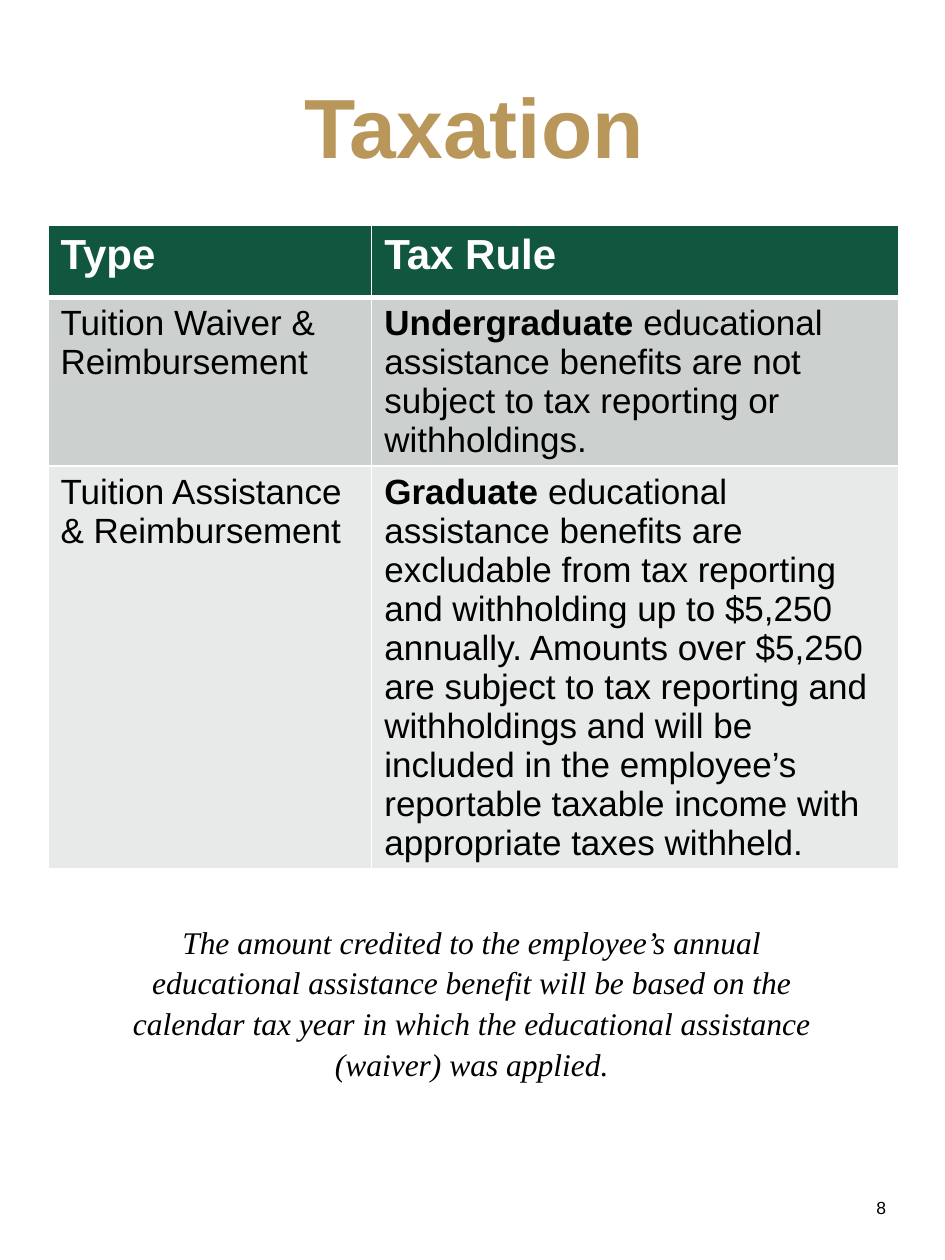
import pptx
import pptx.dml.color
import pptx.enum.text
import pptx.oxml
import pptx.oxml.ns
import pptx.util

COLORS = {
    "gold": "B9975B", "green": "115740", "white": "FFFFFF", "black": "000000",
    "band": "CCD1CF", "light": "E7EAE8",
}
ALIGN = pptx.enum.text.PP_ALIGN
ANCHOR = pptx.enum.text.MSO_ANCHOR
AUTO = pptx.enum.text.MSO_AUTO_SIZE

prs = pptx.Presentation()
prs.slide_width = pptx.util.Inches(7.5)
prs.slide_height = pptx.util.Inches(10)
X = prs.slide_width / 100
Y = prs.slide_height / 100


def rgb(name):
    return pptx.dml.color.RGBColor.from_string(COLORS[name])


def add_run(p, text, size=20, font="Arial", color="black", bold=False, italic=False):
    r = p.add_run()
    r.text = text
    r.font.size = pptx.util.Pt(size)
    r.font.name = font
    r.font.color.rgb = rgb(color)
    r.font.bold = bold
    r.font.italic = italic


s = prs.slides.add_slide(prs.slide_layouts[5])

sp = s.shapes.title
sp.left, sp.top = int(2.93 * X), int(4 * Y)
sp.width, sp.height = int(94.53 * X), int(11.8 * Y)
tf = sp.text_frame
tf.auto_size = AUTO.NONE
tf.vertical_anchor = ANCHOR.MIDDLE
p = tf.paragraphs[0]
p.alignment = ALIGN.CENTER
add_run(p, "Taxation", size=48, color="gold", bold=True)

rows = [
    (5.7, "green", [[("Type", True)], [("Tax Rule", True)]]),
    (10.7, "band", [
        [("Tuition Waiver & Reimbursement", False)],
        [("Undergraduate", True),
         (" educational assistance benefits are not subject to tax reporting "
          "or withholdings.", False)],
    ]),
    (10.7, "light", [
        [("Tuition Assistance & Reimbursement", False)],
        [("Graduate ", True),
         ("educational assistance benefits are excludable from tax reporting and "
          "withholding up to $5,250 annually. Amounts over $5,250 are subject to tax "
          "reporting and withholdings and will be included in the employee’s "
          "reportable taxable income with appropriate taxes withheld.", False)],
    ]),
]
gf = s.shapes.add_table(3, 2, int(5.07 * X), int(17.9 * Y), int(90 * X), int(27.1 * Y))
table = gf.table
table.columns[0].width = int(34.27 * X)
table.columns[1].width = int(55.73 * X)
for i, (height, fill, cells) in enumerate(rows):
    table.rows[i].height = int(height * Y)
    for j, runs in enumerate(cells):
        cell = table.cell(i, j)
        tcPr = cell._tc.get_or_add_tcPr()
        for side in "LRTB":
            heavy = (i, side) in ((0, "B"), (1, "T"))
            tcPr.append(pptx.oxml.parse_xml(
                f'<a:ln{side} {pptx.oxml.ns.nsdecls("a")} w="{pptx.util.Pt(3 if heavy else 1)}">'
                f'<a:solidFill><a:srgbClr val="{COLORS["white"]}"/></a:solidFill></a:ln{side}>'))
        cell.fill.solid()
        cell.fill.fore_color.rgb = rgb(fill)
        for text, bold in runs:
            add_run(cell.text_frame.paragraphs[0], text, bold=bold,
                    size=20 if i else 24, color="black" if i else "white")
gf.height = int(54.4 * Y)

boxes = [
    ((10.13, 72.5, 79.6, 13.1), ALIGN.CENTER, 1.08,
     "The amount credited to the employee’s annual educational assistance benefit "
     "will be based on the calendar tax year in which the educational assistance "
     "(waiver) was applied.",
     {"size": 18, "font": "Times New Roman", "italic": True}),
    ((74.93, 94.5, 20.13, 2.7), ALIGN.RIGHT, 1.0, "8", {"size": 10}),
]
for (left, top, width, height), align, spacing, text, style in boxes:
    sp = s.shapes.add_textbox(int(left * X), int(top * Y), int(width * X), int(height * Y))
    tf = sp.text_frame
    tf.word_wrap = True
    tf.auto_size = AUTO.SHAPE_TO_FIT_TEXT
    p = tf.paragraphs[0]
    p.alignment = align
    p.line_spacing = spacing
    add_run(p, text, **style)

prs.save("out.pptx")
